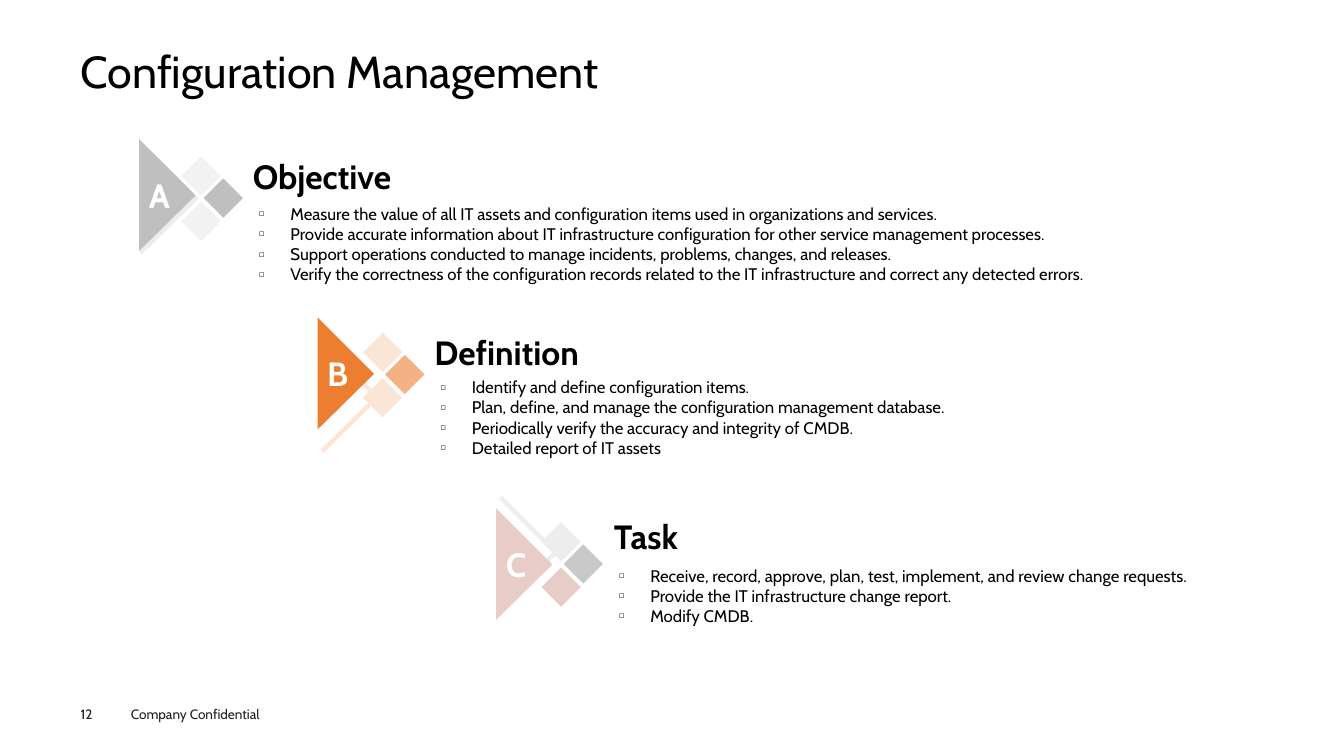
import dataclasses

import lxml.etree
import pptx
import pptx.dml.color
import pptx.enum.shapes
import pptx.enum.text
import pptx.oxml.ns
import pptx.util

PX = 9144  # EMU in one px, 100 px to the inch
FONT = "Cabin"
ANCHOR = pptx.enum.text.MSO_ANCHOR

RGB = pptx.dml.color.RGBColor
BLACK = RGB(0x00, 0x00, 0x00)
WHITE = RGB(0xFF, 0xFF, 0xFF)
INK = RGB(0x1D, 0x1D, 0x1B)
PALE_GREY = RGB(0xF2, 0xF2, 0xF2)
LIGHT_GREY = RGB(0xED, 0xED, 0xED)
SILVER = RGB(0xC9, 0xC9, 0xC9)
GREY = RGB(0xBF, 0xBF, 0xBF)
PEACH = RGB(0xFB, 0xE5, 0xD6)
APRICOT = RGB(0xF4, 0xB1, 0x83)
ORANGE = RGB(0xED, 0x7D, 0x31)
ROSE = RGB(0xE7, 0xCC, 0xC7)

TRIANGLE = [(0, 0), (56, 56), (0, 111)]
RIBBON = [(3, 0), (59, 56), (3, 111), (0, 108), (53, 56), (0, 3)]
DIAMOND_STEPS = [(0, 0), (0, 45), (22, 22)]  # top, bottom, right
DIAMOND_SIZE = 39


@dataclasses.dataclass
class Section:
    letter: str
    heading: str
    items: list
    triangle_at: tuple
    ribbon_at: tuple
    diamonds_at: tuple
    heading_at: tuple
    list_area: tuple
    triangle_color: RGB
    ribbon_color: RGB
    diamond_colors: list


SECTIONS = [
    Section(
        "A", "Objective",
        ["Measure the value of all IT assets and configuration items used in organizations and services.",
         "Provide accurate information about IT infrastructure configuration for other service management processes.",
         "Support operations conducted to manage incidents, problems, changes, and releases.",
         "Verify the correctness of the configuration records related to the IT infrastructure and correct any detected errors."],
        (138, 138), (138, 141), (180, 155), (241, 141), (247, 197, 1052, 128),
        GREY, LIGHT_GREY, [PALE_GREY, PALE_GREY, GREY]),
    Section(
        "B", "Definition",
        ["Identify and define configuration items.",
         "Plan, define, and manage the configuration management database.",
         "Periodically verify the accuracy and integrity of CMDB.",
         "Detailed report of IT assets"],
        (315, 315), (318, 338), (360, 330), (421, 315), (427, 369, 625, 115),
        ORANGE, PEACH, [PEACH, PEACH, APRICOT]),
    Section(
        "C", "Task",
        ["Receive, record, approve, plan, test, implement, and review change requests.",
         "Provide the IT infrastructure change report.",
         "Modify CMDB."],
        (492, 504), (495, 492), (537, 518), (599, 498), (604, 556, 652, 115),
        ROSE, LIGHT_GREY, [LIGHT_GREY, ROSE, SILVER]),
]


def px(*lengths):
    return [pptx.util.Emu(length * PX) for length in lengths]


def style(para, size, color, bold=False):
    para.font.name = FONT
    para.font.size = pptx.util.Pt(size)
    para.font.bold = bold
    para.font.color.rgb = color


def paint(shape, color):
    shape.shadow.inherit = False
    shape.fill.solid()
    shape.fill.fore_color.rgb = color
    shape.line.fill.background()


def place(shape, area):
    shape.left, shape.top, shape.width, shape.height = px(*area)


def set_margins(frame, left=0, top=0, right=0, bottom=0):
    (frame.margin_left, frame.margin_top,
     frame.margin_right, frame.margin_bottom) = px(left, top, right, bottom)


def add_label(page, text, area, size, color, bold=False, anchor=ANCHOR.TOP):
    box = page.shapes.add_textbox(*px(*area))
    frame = box.text_frame
    frame.word_wrap = True
    frame.vertical_anchor = anchor
    para = frame.paragraphs[0]
    para.text = text
    style(para, size, color, bold)
    return frame


def add_outline(page, points, origin, color):
    moved = [(origin[0] + x, origin[1] + y) for x, y in points]
    builder = page.shapes.build_freeform(*moved[0], scale=PX)
    builder.add_line_segments(moved[1:], close=True)
    shape = builder.convert_to_shape()
    paint(shape, color)
    return shape


def add_emblem(page, section):
    # Three diamonds
    for (dx, dy), color in zip(DIAMOND_STEPS, section.diamond_colors):
        left, top = section.diamonds_at
        diamond = page.shapes.add_shape(
            pptx.enum.shapes.MSO_SHAPE.DIAMOND,
            *px(left + dx, top + dy, DIAMOND_SIZE, DIAMOND_SIZE))
        paint(diamond, color)
    # Ribbon behind the lettered triangle
    add_outline(page, RIBBON, section.ribbon_at, section.ribbon_color)
    triangle = add_outline(page, TRIANGLE, section.triangle_at, section.triangle_color)
    frame = triangle.text_frame
    set_margins(frame, right=16)
    frame.vertical_anchor = ANCHOR.MIDDLE
    para = frame.paragraphs[0]
    para.text = section.letter
    para.alignment = pptx.enum.text.PP_ALIGN.CENTER
    style(para, 24, WHITE, bold=True)


def add_bullet(para):
    properties = para._p.get_or_add_pPr()
    indent = px(31)[0]
    properties.set("marL", str(indent))
    properties.set("indent", str(-indent))
    for tag, name, value in [("a:buSzPct", "val", "50000"),
                             ("a:buFont", "typeface", FONT),
                             ("a:buChar", "char", "◻")]:
        element = lxml.etree.SubElement(properties, pptx.oxml.ns.qn(tag))
        element.set(name, value)


def fill_list(holder, items, area):
    place(holder, area)
    frame = holder.text_frame
    frame.auto_size = pptx.enum.text.MSO_AUTO_SIZE.NONE
    frame.vertical_anchor = ANCHOR.TOP
    frame.text = "\n".join(items)
    for para in frame.paragraphs:
        add_bullet(para)
        para.space_before = pptx.util.Pt(0)
        style(para, 12, BLACK)


def fill_title(holder, text):
    place(holder, (80, 49, 1173, 54))
    frame = holder.text_frame
    frame.auto_size = pptx.enum.text.MSO_AUTO_SIZE.NONE
    frame.vertical_anchor = ANCHOR.TOP
    set_margins(frame)
    para = frame.paragraphs[0]
    para.text = text
    para.alignment = pptx.enum.text.PP_ALIGN.LEFT
    para.line_spacing = 0.9
    style(para, 32, BLACK)


def main():
    deck = pptx.Presentation()
    deck.slide_width, deck.slide_height = px(1333, 750)
    page = deck.slides.add_slide(deck.slide_layouts.get_by_name("Comparison"))
    title, *bodies = page.placeholders

    fill_title(title, "Configuration Management")

    # Sections, stepping down to the right
    for section, body in zip(SECTIONS, bodies):
        add_emblem(page, section)
        fill_list(body, section.items, section.list_area)
        add_label(page, section.heading, (*section.heading_at, 383, 59),
                  24, BLACK, bold=True, anchor=ANCHOR.BOTTOM)
    for spare in bodies[len(SECTIONS):]:
        spare.element.getparent().remove(spare.element)

    # Footer
    add_label(page, "Company Confidential", (120, 695, 160, 27), 9.7, INK)
    number = add_label(page, "12", (80, 700, 55, 16), 9.7, INK)
    set_margins(number)

    deck.save("out.pptx")


if __name__ == "__main__":
    main()
